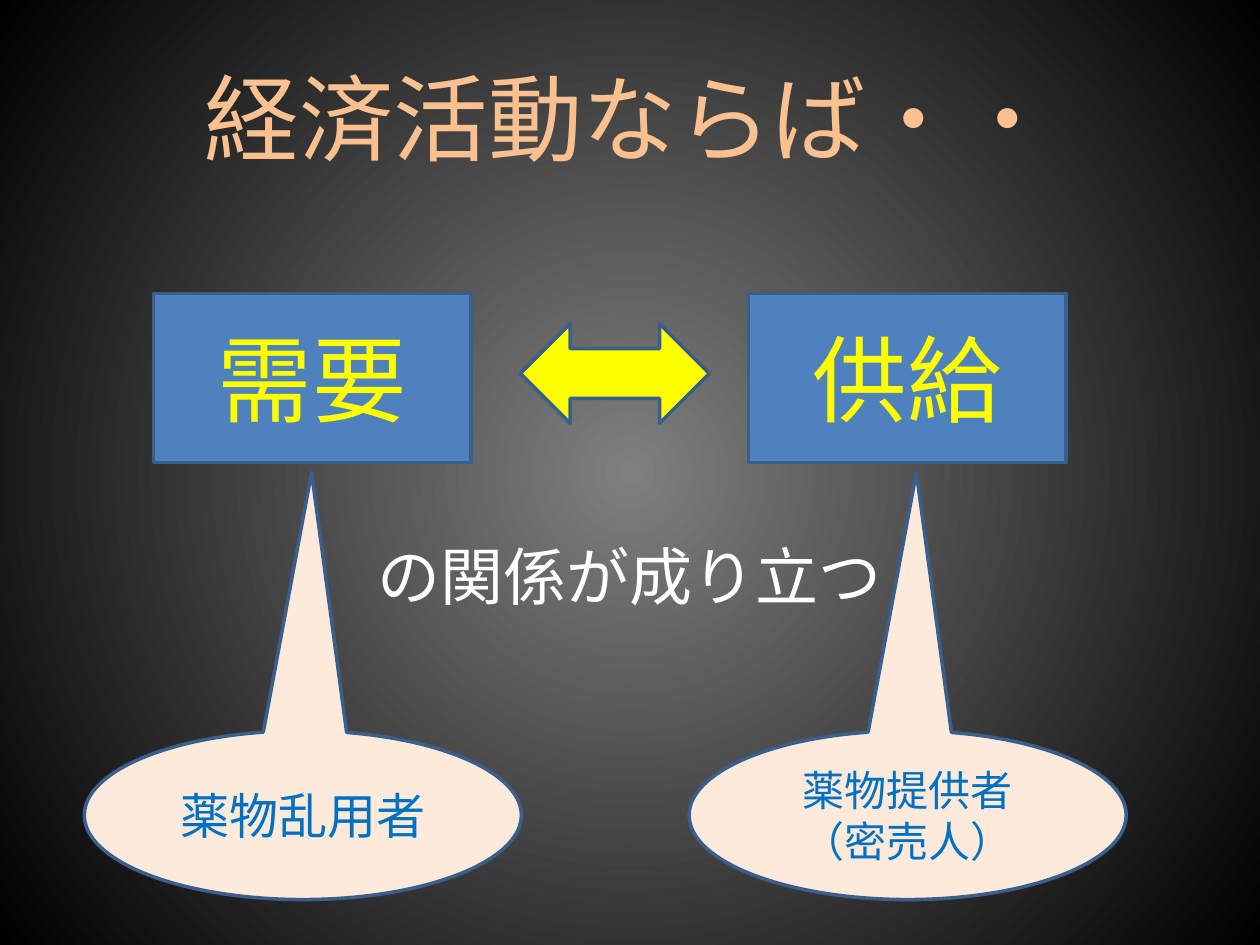
"""Build the slide on supply and demand as an economic relationship."""
from dataclasses import dataclass

from lxml.etree import SubElement
from pptx import Presentation
from pptx.dml.color import RGBColor
from pptx.enum.shapes import MSO_SHAPE
from pptx.enum.text import MSO_ANCHOR, PP_ALIGN
from pptx.oxml.ns import qn
from pptx.util import Pt

TITLE = "経済活動ならば・・"
CONCLUSION = "の関係が成り立つ"
SIDES = [
    {"concept": "需要", "people": ["薬物乱用者"], "people_size": 28},
    {"concept": "供給", "people": ["薬物提供者", "（密売人）"], "people_size": 24},
]


@dataclass(frozen=True)
class Theme:
    font: str = "Noto Sans CJK JP"
    glow: str = "7F7F7F"
    edge: str = "000000"
    title: str = "FAC090"
    body: str = "FFFFFF"
    box: str = "4F81BD"
    accent: str = "FFFF00"
    callout: str = "FDEADA"
    people: str = "0070C0"
    outline: str = "3A5F8C"
    large: int = 54
    medium: int = 36
    line: int = 2


THEME = Theme()
SLIDE_SIZE = (720, 540)
TITLE_AREA = (36, 21.6, 648, 90)
CONCLUSION_AREA = (36, 302, 648, 54)
BOX_AREA, BOX_STEP = (87.8, 167.8, 181.4, 96.5), 339.9
CALLOUT_AREA, CALLOUT_STEP = (48.2, 417.6, 249.8, 96.5), 345.6
ARROW_AREA = (297.4, 185, 108, 56.9)
CALLOUT_TIP = (0.02, -2.03)


def color(value):
    return RGBColor.from_string(value)


def place(shape, area):
    shape.left, shape.top, shape.width, shape.height = map(Pt, area)


def shifted(area, distance):
    left, *rest = area
    return (left + distance, *rest)


def write(shape, lines, size, text_color):
    frame = shape.text_frame
    frame.word_wrap = True
    frame.vertical_anchor = MSO_ANCHOR.MIDDLE
    frame.text = "\n".join(lines)
    for paragraph in frame.paragraphs:
        paragraph.alignment = PP_ALIGN.CENTER
        font = paragraph.font
        font.size = Pt(size)
        font.color.rgb = color(text_color)
        font.name = THEME.font
        properties = paragraph._p.pPr.find(qn("a:defRPr"))
        SubElement(properties, qn("a:ea"), typeface=THEME.font)


def add_outlined(slide, kind, area, fill):
    shape = slide.shapes.add_shape(kind, *map(Pt, area))
    shape.shadow.inherit = False
    shape.fill.solid()
    shape.fill.fore_color.rgb = color(fill)
    shape.line.color.rgb = color(THEME.outline)
    shape.line.width = Pt(THEME.line)
    return shape


def paint_background(slide):
    fill = slide.background.fill
    fill.gradient()
    for stop, position, value in zip(fill.gradient_stops, (0, 1), (THEME.glow, THEME.edge)):
        stop.position = position
        stop.color.rgb = color(value)
    gradient = slide._element.find(f".//{qn('a:gradFill')}")
    gradient.remove(gradient.find(qn("a:lin")))
    circle = SubElement(gradient, qn("a:path"), {"path": "circle"})
    SubElement(circle, qn("a:fillToRect"), dict.fromkeys("ltrb", "50000"))


def main():
    presentation = Presentation()
    presentation.slide_width, presentation.slide_height = map(Pt, SLIDE_SIZE)
    slide = presentation.slides.add_slide(presentation.slide_layouts[5])
    paint_background(slide)

    title = slide.shapes.title
    place(title, TITLE_AREA)
    write(title, [TITLE], THEME.large, THEME.title)

    conclusion = slide.shapes.add_textbox(*map(Pt, CONCLUSION_AREA))
    write(conclusion, [CONCLUSION], THEME.medium, THEME.body)

    for index, side in enumerate(SIDES):
        box = add_outlined(slide, MSO_SHAPE.RECTANGLE,
                           shifted(BOX_AREA, index * BOX_STEP), THEME.box)
        write(box, [side["concept"]], THEME.large, THEME.accent)

        callout = add_outlined(slide, MSO_SHAPE.OVAL_CALLOUT,
                               shifted(CALLOUT_AREA, index * CALLOUT_STEP), THEME.callout)
        callout.adjustments[0], callout.adjustments[1] = CALLOUT_TIP
        write(callout, side["people"], side["people_size"], THEME.people)

    add_outlined(slide, MSO_SHAPE.LEFT_RIGHT_ARROW, ARROW_AREA, THEME.accent)
    presentation.save("out.pptx")


if __name__ == "__main__":
    main()
